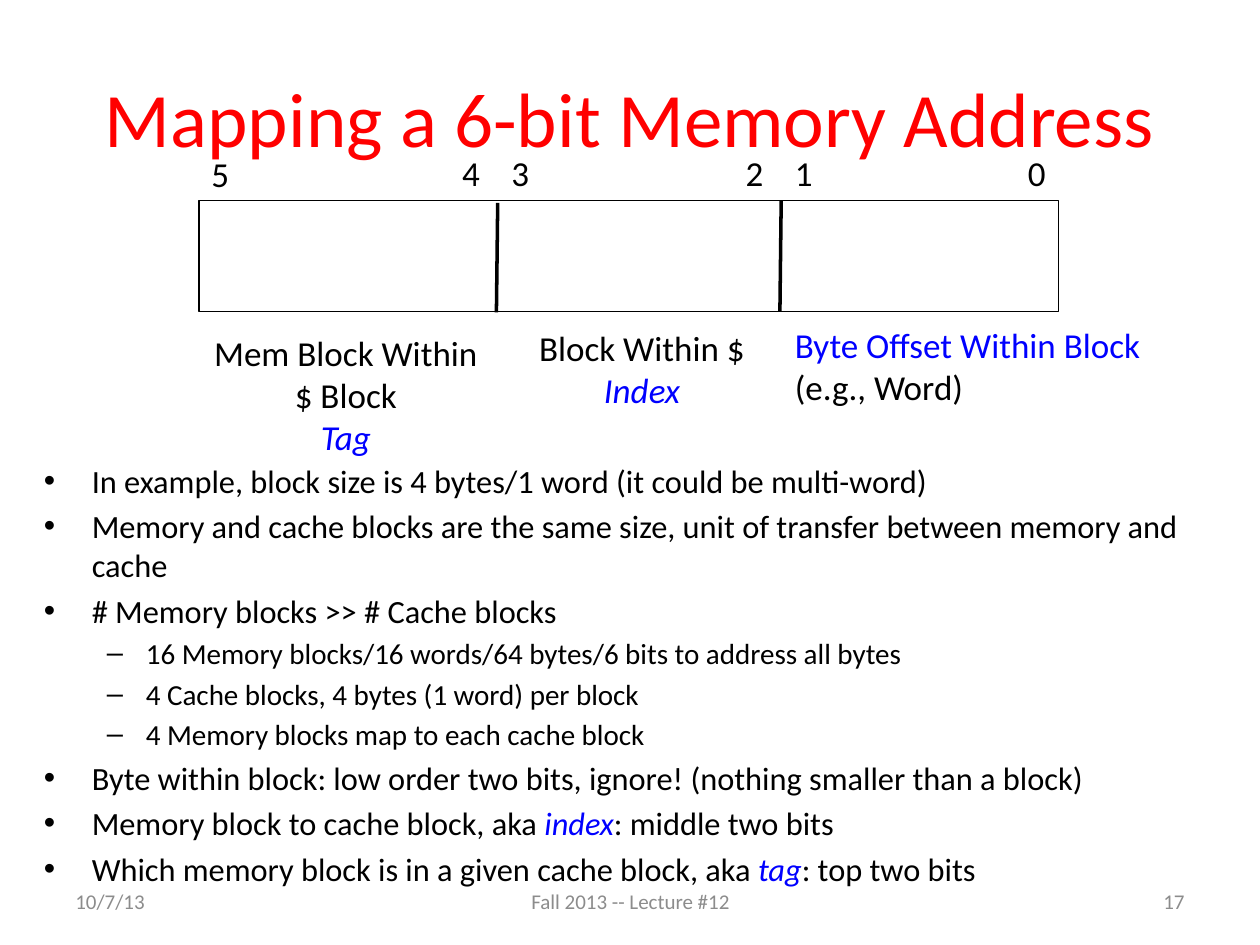
import pptx
import pptx.util
import pptx.dml.color
import pptx.enum.shapes
import pptx.enum.text
import pptx.oxml.ns
from lxml import etree

Inches = pptx.util.Inches
Pt = pptx.util.Pt
ALIGN = pptx.enum.text.PP_ALIGN
ANCHOR = pptx.enum.text.MSO_ANCHOR

BLACK, BLUE, RED, GRAY = "000000", "0000FF", "FF0000", "8C8C8C"
FONT = "Calibri"

TITLE = "Mapping a 6-bit Memory Address"
BULLETS = [
    (0, ["In example, block size is 4 bytes/1 word (it could be multi-word)"]),
    (0, ["Memory and cache blocks are the same size, unit of transfer between memory and cache"]),
    (0, ["# Memory blocks >> # Cache blocks"]),
    (1, ["16 Memory blocks/16 words/64 bytes/6 bits to address all bytes"]),
    (1, ["4 Cache blocks, 4 bytes (1 word) per block"]),
    (1, ["4 Memory blocks map to each cache block"]),
    (0, ["Byte within block: low order two bits, ignore! (nothing smaller than a block)"]),
    (0, ["Memory block to cache block, aka ", ("index", BLUE, True), ": middle two bits"]),
    (0, ["Which memory block is in a given cache block, aka ", ("tag", BLUE, True), ": top two bits"]),
]
LEVELS = [(18.5, "•", 0.38, -0.38), (16.6, "–", 0.81, -0.31)]
BIT_LABELS = [("5", 1.58, 1.16), ("4", 3.57, 1.15), ("3", 3.96, 1.15),
              ("2", 5.82, 1.15), ("1", 6.21, 1.15), ("0", 8.06, 1.15)]
FIELD_LABELS = [
    ((1.59, 2.58, 2.31, 1.11), ALIGN.CENTER, [["Mem Block Within\n$ Block"], [("Tag", BLUE, True)]]),
    ((4.17, 2.54, 1.85, 0.77), ALIGN.CENTER, [["Block Within $"], [("Index", BLUE, True)]]),
    ((6.21, 2.52, 2.97, 0.77), ALIGN.LEFT, [[("Byte Offset Within Block\n", BLUE, False), "(e.g., Word)"]]),
]
ADDRESS_BOX = (1.58, 1.59, 6.82, 0.88)
DIVIDERS = [(3.95, 1.61, 3.94, 2.48), (6.2, 1.59, 6.19, 2.47)]
FOOTERS = [("10/7/13", 0.5, 2.33, ALIGN.LEFT),
           ("Fall 2013 -- Lecture #12", 3.42, 3.17, ALIGN.CENTER),
           ("17", 7.17, 2.33, ALIGN.RIGHT)]


def color(value):
    return pptx.dml.color.RGBColor.from_string(value)


def add_runs(paragraph, runs, size, default_color=BLACK):
    for item in runs:
        text, run_color, italic = (item, default_color, False) if isinstance(item, str) else item
        for index, part in enumerate(text.split("\n")):
            if index:
                paragraph.add_line_break()
            if part:
                run = paragraph.add_run()
                run.text = part
                run.font.name = FONT
                run.font.size = Pt(size)
                run.font.italic = italic
                run.font.color.rgb = color(run_color)


def add_frame(slide, box, wrap=True, anchor=ANCHOR.TOP):
    frame = slide.shapes.add_textbox(*map(Inches, box)).text_frame
    frame.word_wrap = wrap
    frame.vertical_anchor = anchor
    return frame


def add_text(slide, box, paragraphs, size, text_color=BLACK, align=ALIGN.LEFT,
             wrap=True, anchor=ANCHOR.TOP):
    frame = add_frame(slide, box, wrap, anchor)
    for index, runs in enumerate(paragraphs):
        paragraph = frame.add_paragraph() if index else frame.paragraphs[0]
        paragraph.alignment = align
        add_runs(paragraph, runs, size, text_color)


def add_bullets(slide, box):
    frame = add_frame(slide, box)
    for index, (level, runs) in enumerate(BULLETS):
        size, bullet, margin, indent = LEVELS[level]
        paragraph = frame.add_paragraph() if index else frame.paragraphs[0]
        paragraph.level = level
        paragraph.space_before = Pt(round(size * 0.2, 1))
        properties = paragraph._p.get_or_add_pPr()
        properties.set("marL", str(Inches(margin)))
        properties.set("indent", str(Inches(indent)))
        etree.SubElement(properties, pptx.oxml.ns.qn("a:buFont"), typeface="Arial")
        etree.SubElement(properties, pptx.oxml.ns.qn("a:buChar"), char=bullet)
        add_runs(paragraph, runs, size)


def add_address(slide):
    rectangle = slide.shapes.add_shape(
        pptx.enum.shapes.MSO_SHAPE.RECTANGLE, *map(Inches, ADDRESS_BOX))
    rectangle.shadow.inherit = False
    rectangle.fill.background()
    rectangle.line.color.rgb = color(BLACK)
    rectangle.line.width = Pt(0.75)
    for ends in DIVIDERS:
        divider = slide.shapes.add_connector(
            pptx.enum.shapes.MSO_CONNECTOR.STRAIGHT, *map(Inches, ends))
        divider.line.color.rgb = color(BLACK)
        divider.line.width = Pt(2)
        etree.SubElement(divider._element.spPr, pptx.oxml.ns.qn("a:effectLst"))
    for digit, left, top in BIT_LABELS:
        add_text(slide, (left, top, 0.34, 0.44), [[digit]], 20, wrap=False)
    for box, align, paragraphs in FIELD_LABELS:
        add_text(slide, box, paragraphs, 20, align=align, wrap=False)


def main():
    presentation = pptx.Presentation()
    presentation.slide_width = Inches(10)
    presentation.slide_height = Inches(7.5)
    slide = presentation.slides.add_slide(presentation.slide_layouts[6])
    add_text(slide, (0.5, 0.3, 9, 1.25), [[TITLE]], 44, RED, ALIGN.CENTER, anchor=ANCHOR.MIDDLE)
    add_bullets(slide, (0.25, 3.61, 9.75, 3.47))
    for text, left, width, align in FOOTERS:
        add_text(slide, (left, 6.95, width, 0.4), [[text]], 12, GRAY, align, anchor=ANCHOR.MIDDLE)
    add_address(slide)
    presentation.save("out.pptx")


if __name__ == "__main__":
    main()
